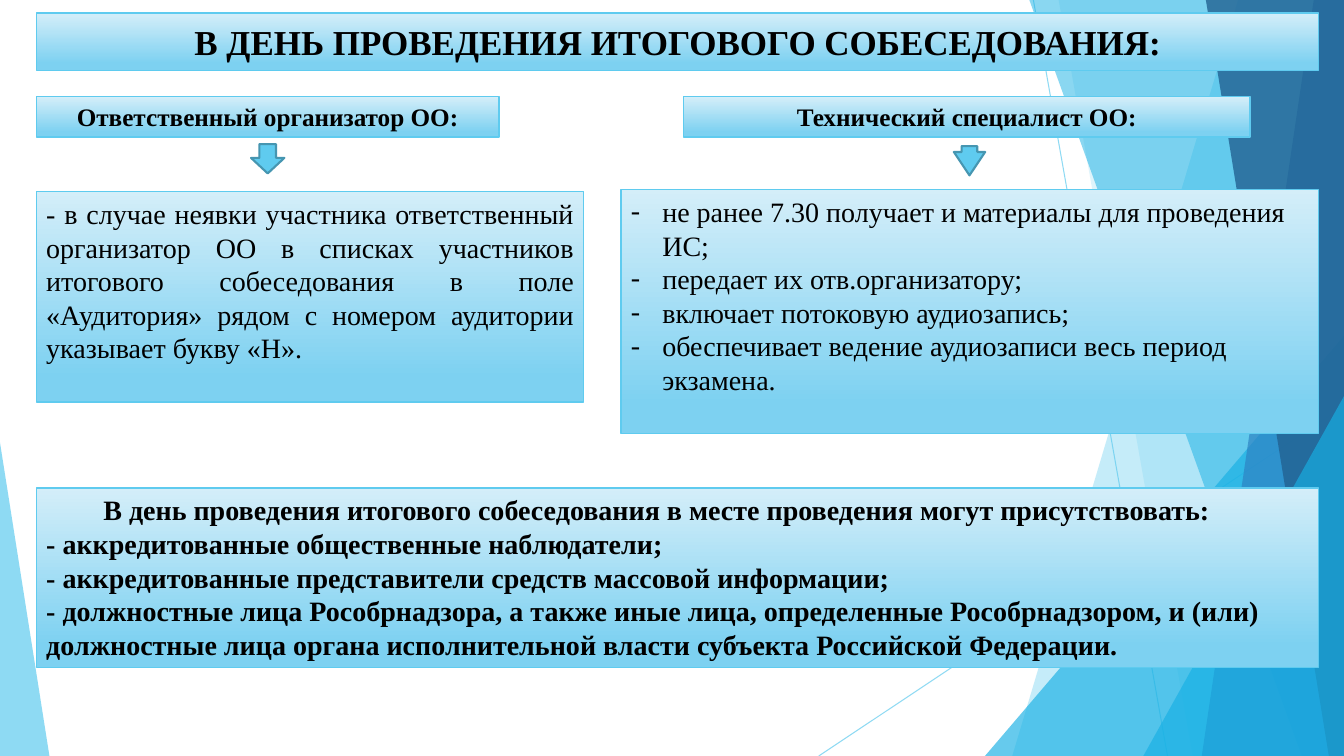
from lxml.etree import SubElement
from pptx import Presentation
from pptx.dml.color import RGBColor
from pptx.enum.shapes import MSO_CONNECTOR, MSO_SHAPE
from pptx.enum.text import MSO_ANCHOR, PP_ALIGN
from pptx.oxml.ns import qn
from pptx.util import Inches, Pt

WIDE, HIGH = Inches(13.33), Inches(7.5)
FONT = "Times New Roman"
BLACK = RGBColor(0x00, 0x00, 0x00)
PALE = RGBColor(0xD4, 0xEE, 0xF9)
SOFT = RGBColor(0x7D, 0xD1, 0xF1)
SKY = RGBColor(0x5F, 0xCB, 0xEF)
AQUA = RGBColor(0x17, 0xB0, 0xE4)
BLUE = RGBColor(0x2E, 0x83, 0xC3)
NAVY = RGBColor(0x22, 0x62, 0x92)
TEAL = RGBColor(0x46, 0x96, 0xB1)

# Margins and text rows, in percent of the slide
LEFT, RIGHT = 2.7, 98.12
HEAD = 12.8

DUTY = "- в случае неявки участника ответственный организатор ОО в списках участников итогового собеседования в поле «Аудитория» рядом с номером аудитории указывает букву «Н»."
TASKS = [
    "не ранее 7.30 получает и материалы для проведения ИС;",
    "передает их отв.организатору;",
    "включает потоковую аудиозапись;",
    "обеспечивает ведение аудиозаписи весь период экзамена.",
]
GUESTS = [
    "В день проведения итогового собеседования в месте проведения могут присутствовать:",
    "- аккредитованные общественные наблюдатели;",
    "- аккредитованные представители средств массовой информации;",
    "- должностные лица Рособрнадзора, а также иные лица, определенные Рособрнадзором, и (или)",
    "должностные лица органа исполнительной власти субъекта Российской Федерации.",
]


def col(share):
    return int(WIDE * share / 100)


def row(share):
    return int(HIGH * share / 100)


def fade(fill, share):
    """Set the opacity of a solid fill, in percent."""
    tone = fill._xPr.find(qn("a:solidFill"))[0]
    SubElement(tone, qn("a:alpha")).set("val", str(share * 1000))


def tint(shape, color, share):
    shape.shadow.inherit = False
    shape.fill.solid()
    shape.fill.fore_color.rgb = color
    fade(shape.fill, share)
    shape.line.fill.background()


def facet(slide, top, base, color, share):
    """Slanted panel that reaches the right edge of the slide."""
    pen = slide.shapes.build_freeform(col(top), 0)
    pen.add_line_segments([(WIDE, 0), (WIDE, HIGH), (col(base), HIGH)])
    tint(pen.convert_to_shape(), color, share)


def wedge(slide, x, y, w, tip, color, share):
    """Triangle that stands on the bottom edge of the slide."""
    shape = slide.shapes.add_shape(
        MSO_SHAPE.ISOSCELES_TRIANGLE, col(x), row(y), col(w), row(100 - y))
    shape.adjustments[0] = tip
    tint(shape, color, share)


def ray(slide, x, y, end):
    """Thin line that runs down to the bottom edge."""
    line = slide.shapes.add_connector(
        MSO_CONNECTOR.STRAIGHT, col(x), row(y), col(end), HIGH)
    line.line.color.rgb = SKY
    line.line.width = Pt(0.75)
    fade(line.line.fill, 70)
    SubElement(line._element.spPr, qn("a:effectLst"))


def panel(slide, x, y, w, h):
    """Box with a vertical gradient; gives back its text frame."""
    box = slide.shapes.add_shape(
        MSO_SHAPE.RECTANGLE, col(x), row(y), col(w), row(h))
    box.shadow.inherit = False
    box.fill.gradient()
    box.fill.gradient_angle = 270
    for stop, place, color in zip(box.fill.gradient_stops, (0, 0.88), (PALE, SOFT)):
        stop.position = place
        stop.color.rgb = color
    box.line.color.rgb = SKY
    box.line.width = Pt(1)
    frame = box.text_frame
    frame.word_wrap = True
    frame.vertical_anchor = MSO_ANCHOR.TOP
    return frame


def write(frame, lines, size, bold=False, align=PP_ALIGN.LEFT):
    for i, text in enumerate(lines):
        para = frame.add_paragraph() if i else frame.paragraphs[0]
        para.alignment = align
        run = para.add_run()
        run.text = text
        run.font.name = FONT
        run.font.size = Pt(size)
        run.font.bold = bold
        run.font.color.rgb = BLACK


def indent(para, first, left=0):
    props = para._p.get_or_add_pPr()
    props.set("marL", str(col(left)))
    props.set("indent", str(col(first)))
    return props


def dash(para):
    props = indent(para, -2.33, 2.33)
    SubElement(props, qn("a:buFont")).set("typeface", FONT)
    SubElement(props, qn("a:buChar")).set("char", "-")


def arrow(slide, x, y, w, head):
    shape = slide.shapes.add_shape(
        MSO_SHAPE.DOWN_ARROW, col(x), row(y), col(w), row(3.87))
    shape.adjustments[1] = head
    shape.shadow.inherit = False
    shape.fill.solid()
    shape.fill.fore_color.rgb = SKY
    shape.line.color.rgb = TEAL
    shape.line.width = Pt(1.5)


def decor(slide):
    ray(slide, 76.89, 0, 86.87)
    ray(slide, 100, 53.73, 60.92)
    facet(slide, 92.12, 75.32, SKY, 36)
    facet(slide, 78.77, 88.75, SKY, 20)
    wedge(slide, 73.29, 44.4, 26.71, 1, AQUA, 66)
    facet(slide, 76.59, 96.85, AQUA, 50)
    facet(slide, 97.75, 89.42, BLUE, 70)
    facet(slide, 89.72, 98.87, NAVY, 80)
    wedge(slide, 85.07, 52.4, 14.93, 1, AQUA, 66)
    wedge(slide, 0, 58.53, 3.68, 0, SKY, 70)


def main():
    deck = Presentation()
    deck.slide_width, deck.slide_height = WIDE, HIGH
    slide = deck.slides.add_slide(deck.slide_layouts[6])
    decor(slide)

    # Title
    title = panel(slide, LEFT, 1.73, RIGHT - LEFT, 7.6)
    title.vertical_anchor = MSO_ANCHOR.MIDDLE
    write(title, ["В ДЕНЬ ПРОВЕДЕНИЯ ИТОГОВОГО СОБЕСЕДОВАНИЯ:"],
          25, True, PP_ALIGN.CENTER)

    # Column heads
    for x, w, text in ((LEFT, 34.43, "Ответственный организатор ОО:"),
                       (50.86, 42.16, "Технический специалист ОО:")):
        write(panel(slide, x, HEAD, w, 5.33), [text], 18, True, PP_ALIGN.CENTER)

    # Duties under each head
    arrow(slide, 18.68, 19.07, 2.48, 0.53)
    arrow(slide, 70.97, 19.33, 2.33, 0.8)
    write(panel(slide, LEFT, 25.33, 40.74, 27.87), [DUTY], 20,
          align=PP_ALIGN.JUSTIFY)
    tasks = panel(slide, 46.21, 25.07, RIGHT - 46.21, 32.27)
    write(tasks, TASKS, 20)
    for para in tasks.paragraphs:
        dash(para)

    # Who may attend
    guests = panel(slide, LEFT, 64.53, RIGHT - LEFT, 23.73)
    write(guests, GUESTS, 20, True)
    indent(guests.paragraphs[0], 4.25)

    deck.save("out.pptx")


if __name__ == "__main__":
    main()
